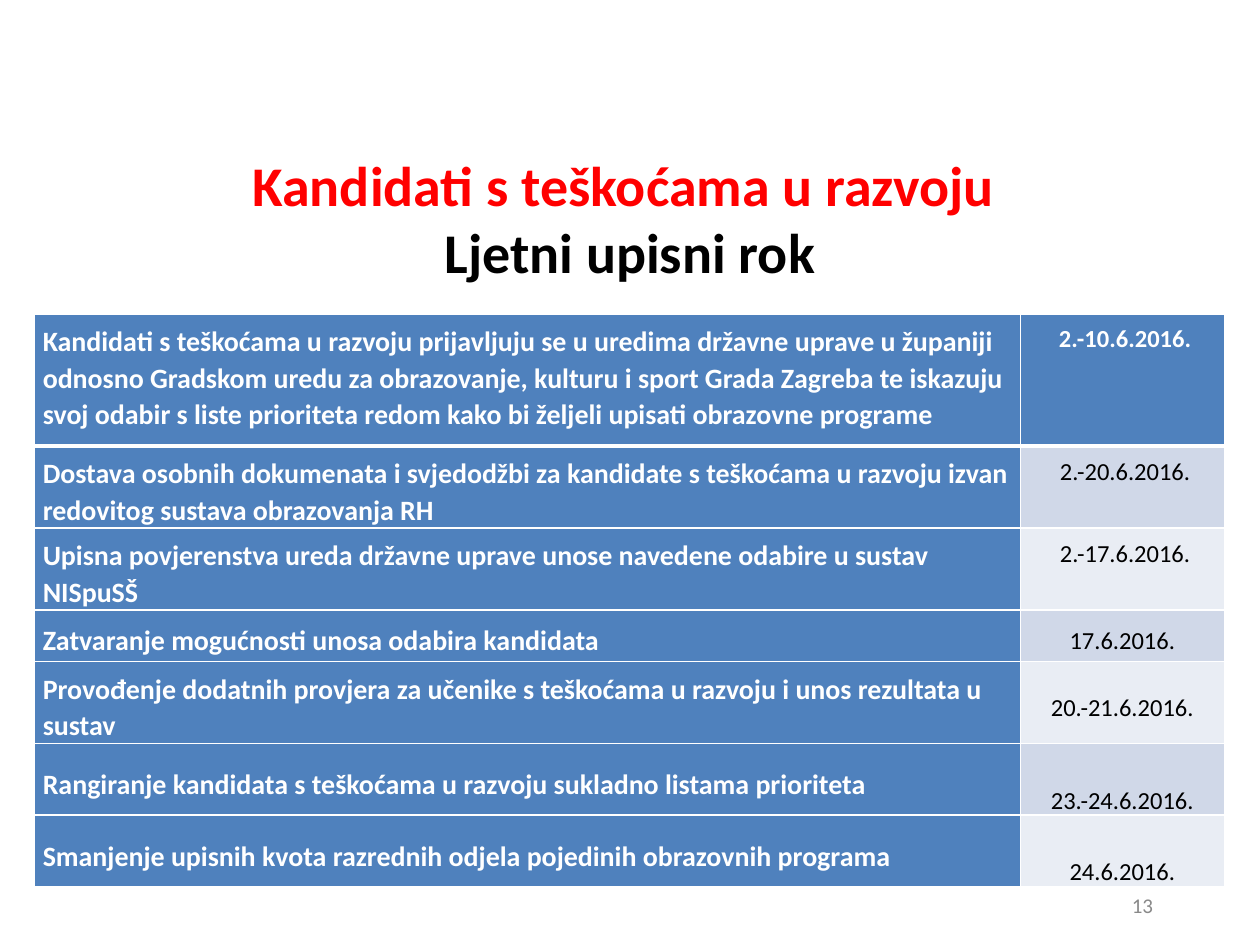
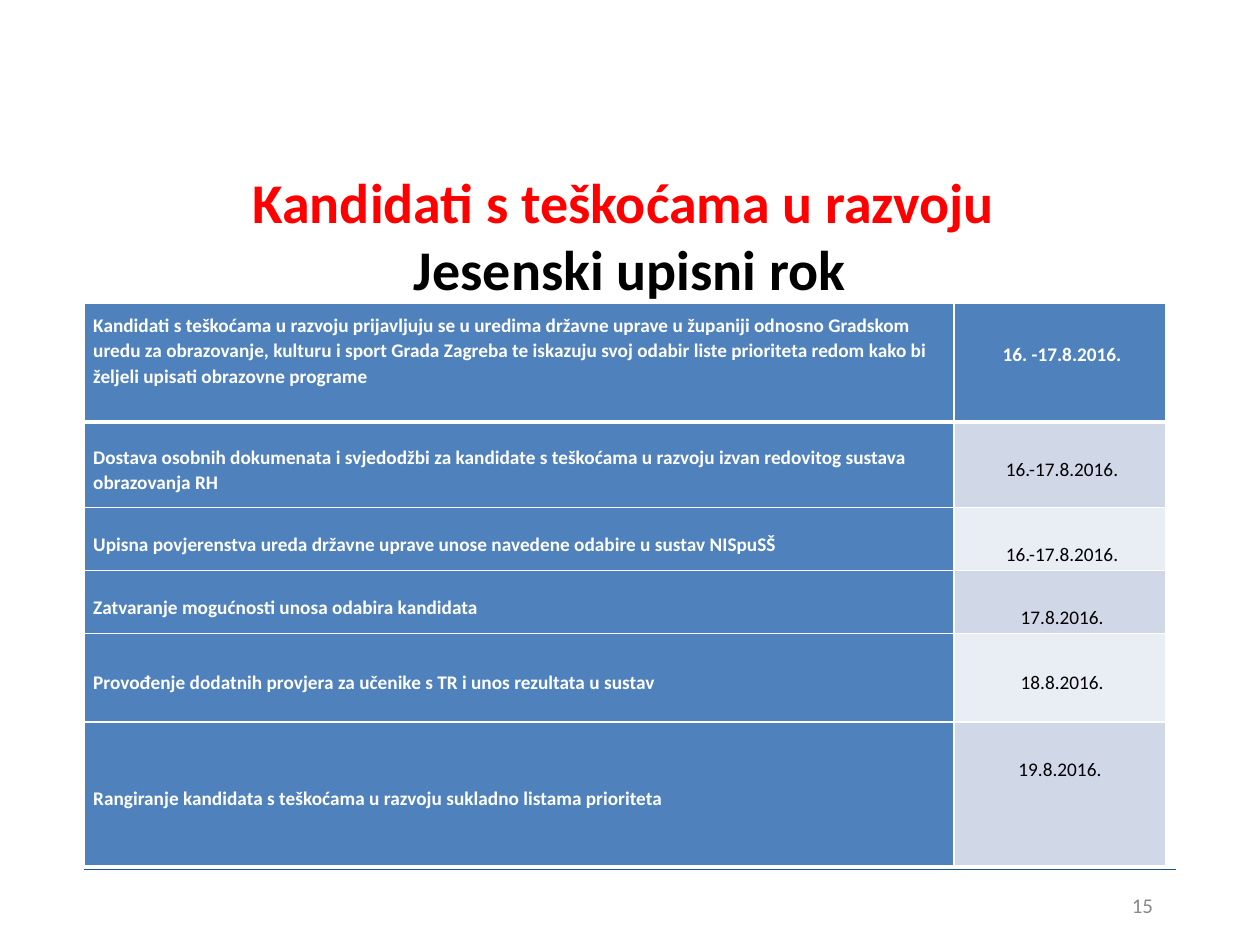
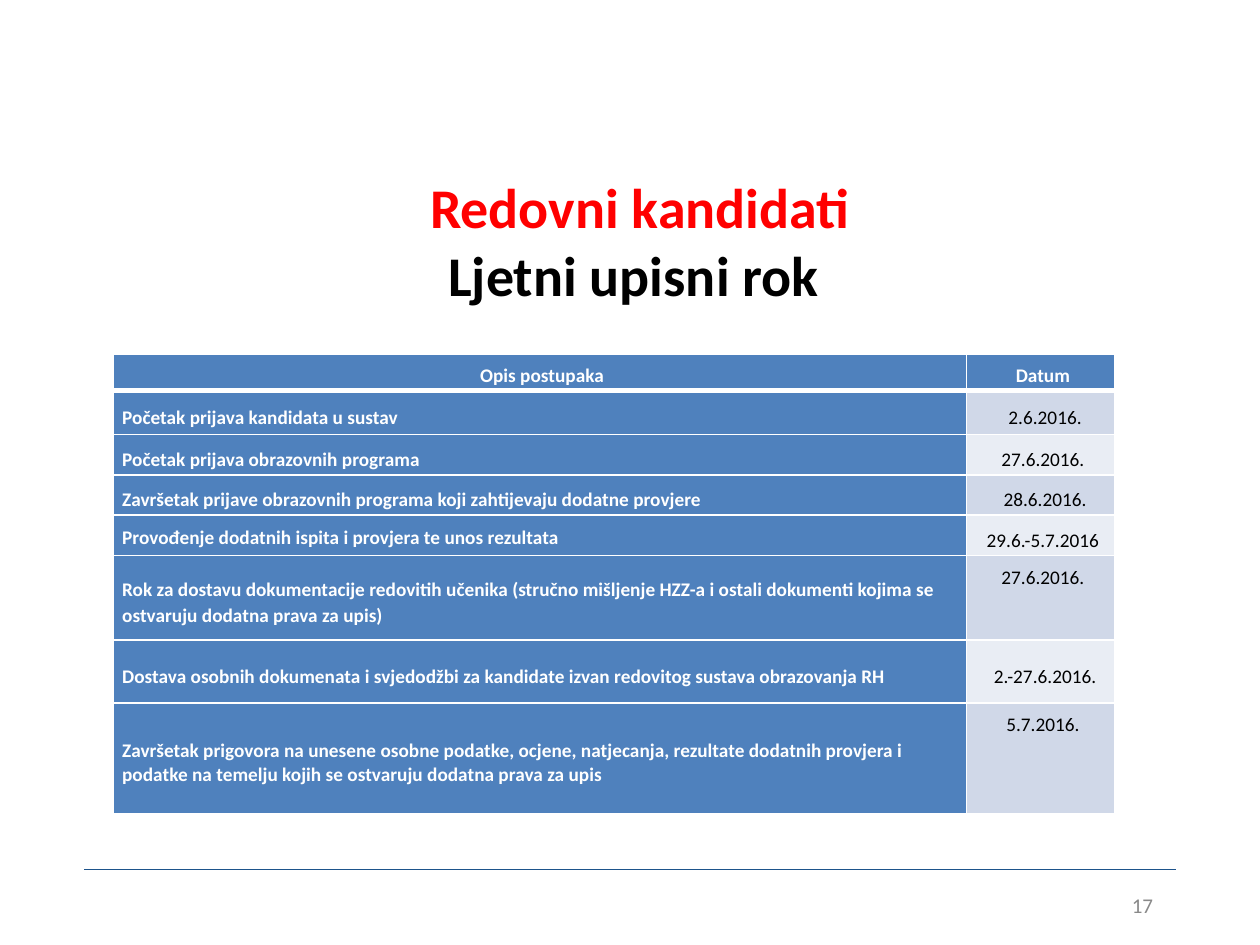
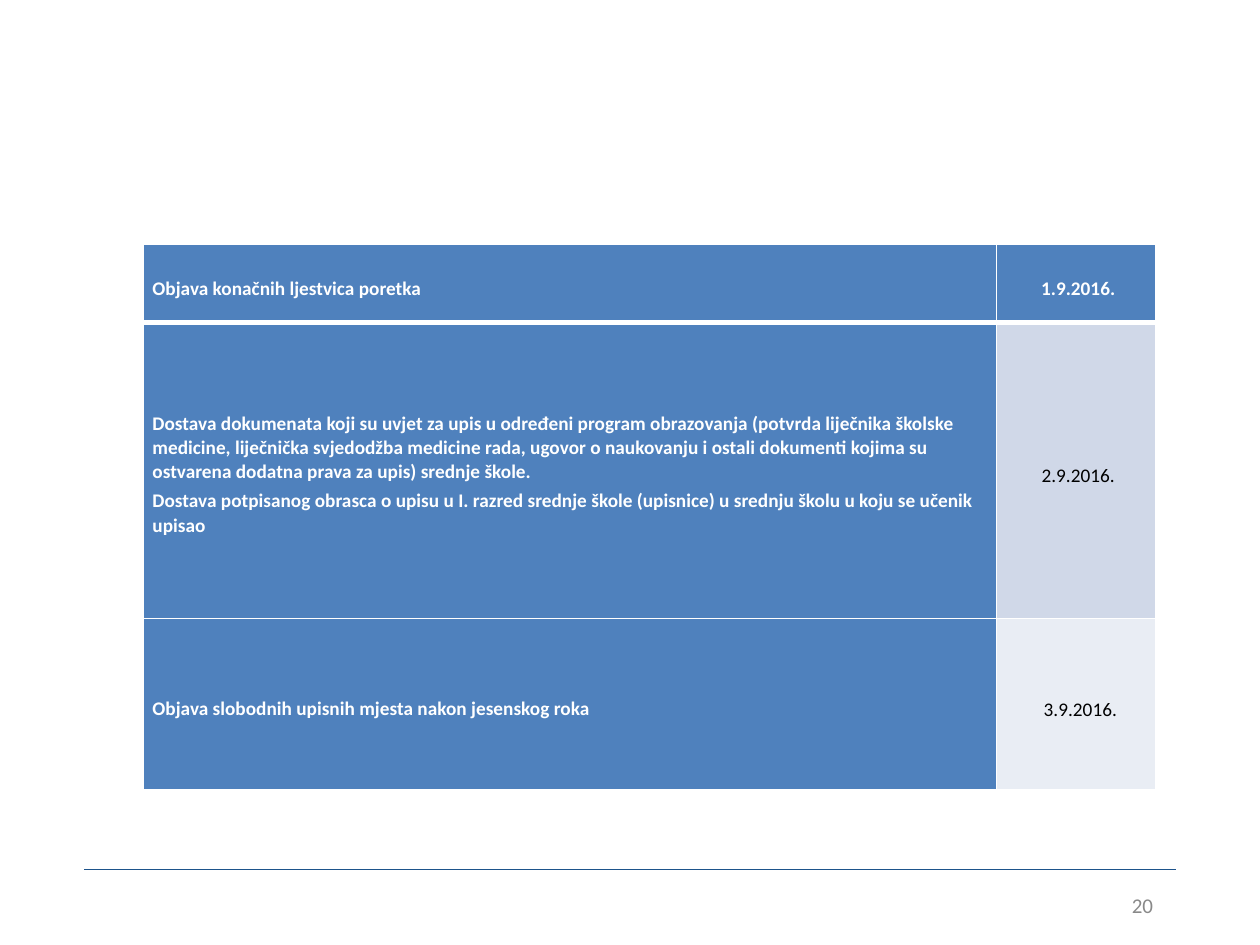
from dataclasses import dataclass
from typing import Optional

from lxml.etree import SubElement
from pptx import Presentation
from pptx.dml.color import RGBColor
from pptx.enum.shapes import MSO_CONNECTOR
from pptx.enum.text import MSO_ANCHOR, MSO_AUTO_SIZE, PP_ALIGN
from pptx.oxml import parse_xml
from pptx.oxml.ns import nsdecls, qn
from pptx.util import Inches, Pt

FONT = "Calibri"
WHITE, BLACK, RED = "FFFFFF", "000000", "FF0000"
BLUE, BAND_DARK, BAND_LIGHT = "4F81BD", "D0D8E8", "E9EDF4"
RULE, NUMBER_GREY = "1D538B", "898989"
TITLE_ONLY, BLANK = 5, 6
CELL_INSET = 0.07


@dataclass
class Step:
    """One table row; a drop puts text that far below the cell top, None centres it."""
    height: float
    label: object
    date: str
    label_drop: Optional[float] = None
    date_drop: Optional[float] = None


@dataclass
class Line:
    """One paragraph of a label with its own spacing."""
    text: str
    spacing: float = 1.07
    after: float = 0


def color(value):
    return RGBColor.from_string(value)


def add_run(paragraph, text, size, value, bold=False):
    run = paragraph.add_run()
    run.text = text
    run.font.name = FONT
    run.font.size = Pt(size)
    run.font.bold = bold
    run.font.color.rgb = color(value)


# Parts shared by the slides
def add_slide(presentation, layout, number):
    slide = presentation.slides.add_slide(presentation.slide_layouts[layout])
    rule = slide.shapes.add_connector(
        MSO_CONNECTOR.STRAIGHT, Inches(0.67), Inches(6.9), Inches(9.33), Inches(6.9))
    rule.line.color.rgb = color(RULE)
    rule.line.width = Pt(0.25)
    SubElement(rule.element.spPr, qn("a:effectLst"))

    box = slide.shapes.add_textbox(Inches(7.17), Inches(6.99), Inches(2.08), Inches(0.38))
    box.text_frame.word_wrap = True
    box.text_frame.vertical_anchor = MSO_ANCHOR.MIDDLE
    paragraph = box.text_frame.paragraphs[0]
    paragraph.alignment = PP_ALIGN.RIGHT
    add_run(paragraph, str(number), 12, NUMBER_GREY)
    return slide


def set_title(slide, left, top, height, candidates, term, inset=0.05):
    title = slide.shapes.title
    title.left, title.top = Inches(left), Inches(top)
    title.width, title.height = Inches(8.5), Inches(height)
    frame = title.text_frame
    frame.auto_size = MSO_AUTO_SIZE.NONE
    frame.vertical_anchor = MSO_ANCHOR.MIDDLE
    frame.margin_top = Inches(inset)
    paragraph = frame.paragraphs[0]
    paragraph.alignment = PP_ALIGN.CENTER
    add_run(paragraph, candidates, 32, RED, bold=True)
    paragraph.add_line_break()
    add_run(paragraph, term, 32, BLACK, bold=True)


# Table of steps and dates
def set_borders(cell, top, bottom):
    properties = cell._tc.get_or_add_tcPr()
    for index, (side, width) in enumerate(
            [("L", 1), ("R", 1), ("T", top), ("B", bottom)]):
        properties.insert(index, parse_xml(
            f'<a:ln{side} {nsdecls("a")} w="{Pt(width)}"><a:solidFill>'
            f'<a:srgbClr val="{WHITE}"/></a:solidFill></a:ln{side}>'))


def fill_cell(cell, lines, size, text_color, fill, bold, alignment, drop, right_inset):
    cell.fill.solid()
    cell.fill.fore_color.rgb = color(fill)
    cell.margin_left = Inches(CELL_INSET)
    cell.margin_top = Inches(CELL_INSET + (drop or 0))
    cell.margin_right = Inches(right_inset)
    cell.margin_bottom = 0
    cell.vertical_anchor = MSO_ANCHOR.MIDDLE if drop is None else MSO_ANCHOR.TOP
    frame = cell.text_frame
    for index, line in enumerate(lines):
        paragraph = frame.add_paragraph() if index else frame.paragraphs[0]
        paragraph.alignment = alignment
        paragraph.line_spacing = line.spacing
        paragraph.space_after = Pt(line.after)
        add_run(paragraph, line.text, size, text_color, bold)


def add_steps(slide, left, top, widths, steps, label_size=11, date_size=11,
              right_inset=0.0, centre_heading=False):
    height = sum(step.height for step in steps)
    table = slide.shapes.add_table(
        len(steps), 2, Inches(left), Inches(top),
        Inches(sum(widths)), Inches(height)).table
    for column, width in zip(table.columns, widths):
        column.width = Inches(width)
    for index, step in enumerate(steps):
        table.rows[index].height = Inches(step.height)
        heading = index == 0
        lines = [Line(step.label)] if isinstance(step.label, str) else step.label
        label_cell, date_cell = table.cell(index, 0), table.cell(index, 1)
        alignment = PP_ALIGN.CENTER if heading and centre_heading else PP_ALIGN.LEFT
        fill_cell(label_cell, lines, label_size, WHITE, BLUE, True,
                  alignment, step.label_drop, right_inset)
        band = BAND_DARK if index % 2 else BAND_LIGHT
        fill_cell(date_cell, [Line(step.date)], date_size,
                  WHITE if heading else BLACK, BLUE if heading else band, heading,
                  PP_ALIGN.CENTER, step.date_drop, right_inset)
        for cell in (label_cell, date_cell):
            set_borders(cell, 3 if index == 1 else 1, 3 if heading else 1)


SUMMER_SPECIAL = [
    Step(1.05, "Kandidati s teškoćama u razvoju prijavljuju se u uredima državne uprave "
         "u županiji odnosno Gradskom uredu za obrazovanje, kulturu i sport Grada Zagreba "
         "te iskazuju svoj odabir s liste prioriteta redom kako bi željeli upisati "
         "obrazovne programe", "2.-10.6.2016.", 0, 0),
    Step(0.65, "Dostava osobnih dokumenata i svjedodžbi za kandidate s teškoćama u razvoju "
         "izvan redovitog sustava obrazovanja RH", "2.-20.6.2016.", date_drop=0),
    Step(0.65, "Upisna povjerenstva ureda državne uprave unose navedene odabire u sustav "
         "NISpuSŠ", "2.-17.6.2016.", date_drop=0),
    Step(0.41, "Zatvaranje mogućnosti unosa odabira kandidata", "17.6.2016. "),
    Step(0.65, "Provođenje dodatnih provjera za učenike s teškoćama u razvoju i unos "
         "rezultata u sustav", "20.-21.6.2016. "),
    Step(0.57, "Rangiranje kandidata s teškoćama u razvoju sukladno listama prioriteta",
         "23.-24.6.2016. ", date_drop=0.25),
    Step(0.57, "Smanjenje upisnih kvota razrednih odjela pojedinih obrazovnih programa",
         "24.6.2016. ", date_drop=0.25),
]

AUTUMN_SPECIAL = [
    Step(0.94, "Kandidati s teškoćama u razvoju prijavljuju se u uredima državne uprave "
         "u županiji odnosno Gradskom uredu za obrazovanje, kulturu i sport Grada Zagreba "
         "te iskazuju svoj odabir liste prioriteta redom kako bi željeli upisati "
         "obrazovne programe", "16. -17.8.2016.", 0, 0.23),
    Step(0.68, "Dostava osobnih dokumenata i svjedodžbi za kandidate s teškoćama u razvoju "
         "izvan redovitog sustava obrazovanja RH", "16.-17.8.2016.", date_drop=0.2),
    Step(0.5, "Upisna povjerenstva ureda državne uprave unose navedene odabire u sustav "
         "NISpuSŠ", "16.-17.8.2016.", date_drop=0.2),
    Step(0.5, "Zatvaranje mogućnosti unosa odabira kandidata", "17.8.2016.", date_drop=0.2),
    Step(0.7, "Provođenje dodatnih provjera za učenike s TR i unos rezultata u sustav",
         "18.8.2016."),
    Step(1.14, "Rangiranje kandidata s teškoćama u razvoju sukladno listama prioriteta",
         "19.8.2016. ", date_drop=0.2),
]

SUMMER_REGULAR = [
    Step(0.29, "Opis postupaka ", "Datum ", 0, 0),
    Step(0.35, "Početak prijava kandidata u sustav", "2.6.2016."),
    Step(0.32, "Početak prijava obrazovnih programa", "27.6.2016. "),
    Step(0.32, "Završetak prijave obrazovnih programa koji zahtijevaju dodatne provjere",
         "28.6.2016."),
    Step(0.32, "Provođenje dodatnih ispita i provjera te unos rezultata",
         "29.6.-5.7.2016 ", label_drop=0),
    Step(0.67, "Rok za dostavu dokumentacije redovitih učenika (stručno mišljenje HZZ-a i "
         "ostali dokumenti kojima se ostvaruju dodatna prava za upis)",
         "27.6.2016. ", date_drop=0),
    Step(0.5, "Dostava osobnih dokumenata i svjedodžbi za kandidate izvan redovitog sustava "
         "obrazovanja RH", "2.-27.6.2016."),
    Step(0.88, [Line("Završetak prigovora na unesene osobne podatke, ocjene, natjecanja, "
                     "rezultate dodatnih provjera i podatke na temelju kojih se ostvaruju "
                     "dodatna prava za upis", 0.99, 2)], "5.7.2016. ", date_drop=0),
]

AUTUMN_RESULTS = [
    Step(0.62, "Objava konačnih ljestvica poretka", "1.9.2016. "),
    Step(2.35, [
        Line("Dostava dokumenata koji su uvjet za upis u određeni program obrazovanja "
             "(potvrda liječnika školske medicine, liječnička svjedodžba medicine rada, "
             "ugovor o naukovanju i ostali dokumenti kojima su ostvarena dodatna prava "
             "za upis) srednje škole.", 1.0, 2),
        Line("Dostava potpisanog obrasca o upisu u I. razred srednje škole (upisnice) "
             "u srednju školu u koju se učenik upisao")], "2.9.2016. "),
    Step(1.36, [Line("Objava slobodnih upisnih mjesta nakon jesenskog roka", 1.0, 2)],
         "3.9.2016."),
]


def main():
    presentation = Presentation()
    presentation.slide_width, presentation.slide_height = Inches(10), Inches(7.5)

    # Candidates with developmental difficulties, summer term
    slide = add_slide(presentation, TITLE_ONLY, 13)
    set_title(slide, 0.75, 1.15, 1.02, "Kandidati s teškoćama u razvoju ",
              "Ljetni upisni rok", inset=0.19)
    add_steps(slide, 0.27, 2.49, [7.83, 1.62], SUMMER_SPECIAL,
              label_size=16, date_size=14, right_inset=0.03)

    # Candidates with developmental difficulties, autumn term
    slide = add_slide(presentation, TITLE_ONLY, 15)
    set_title(slide, 0.75, 1.39, 0.95, "Kandidati s teškoćama u razvoju ",
              "Jesenski upisni rok")
    add_steps(slide, 0.67, 2.41, [6.9, 1.68], AUTUMN_SPECIAL, right_inset=0.03)

    # Regular candidates, summer term
    slide = add_slide(presentation, TITLE_ONLY, 17)
    set_title(slide, 0.83, 1.47, 0.87, "Redovni kandidati", "Ljetni upisni rok ")
    add_steps(slide, 0.9, 2.81, [6.77, 1.18], SUMMER_REGULAR, centre_heading=True)

    # Final results, autumn term
    slide = add_slide(presentation, BLANK, 20)
    add_steps(slide, 1.14, 1.94, [6.77, 1.26], AUTUMN_RESULTS)

    presentation.save("out.pptx")


if __name__ == "__main__":
    main()
